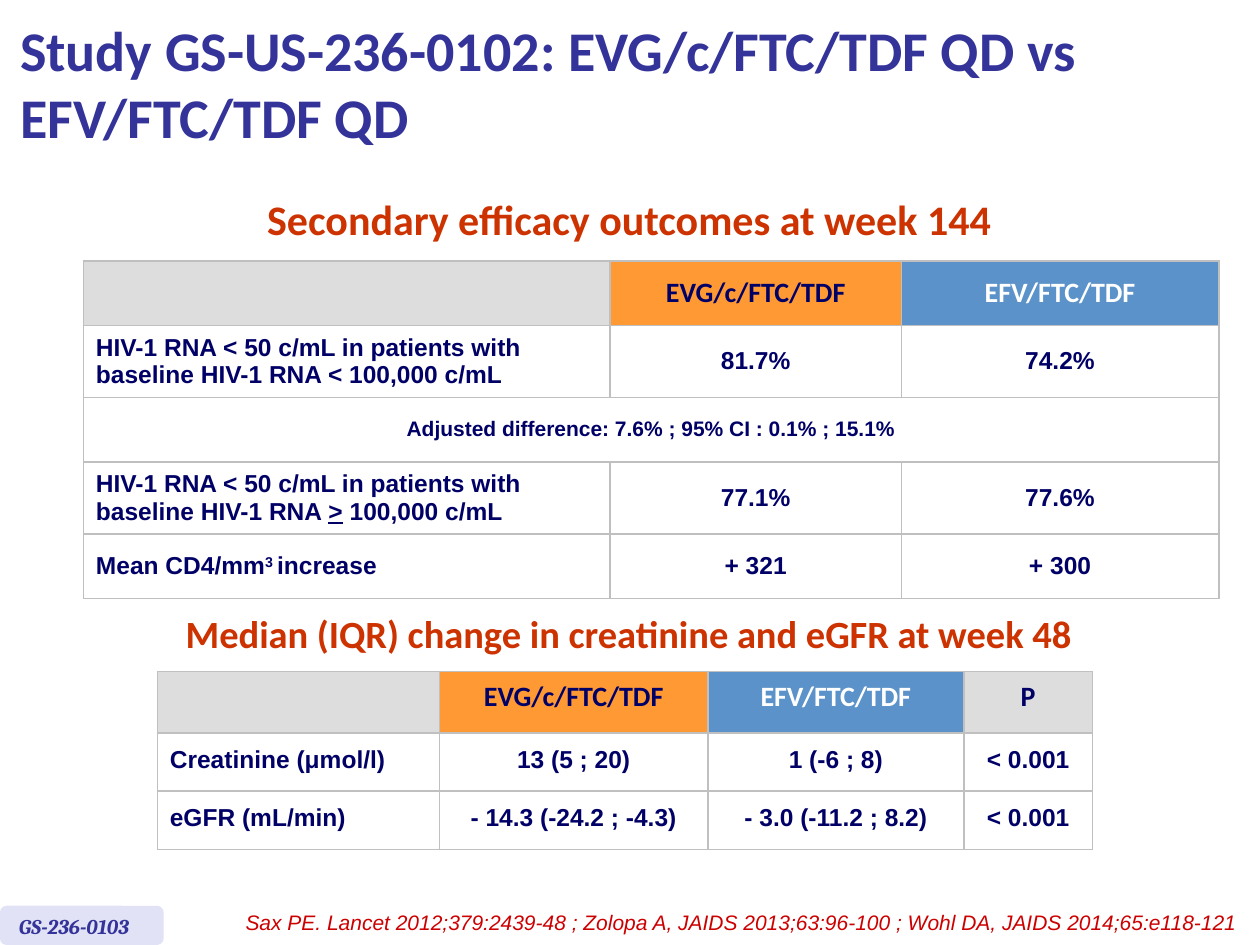
from lxml import etree
from pptx import Presentation
from pptx import util as u
from pptx.dml.color import RGBColor
from pptx.enum import shapes, text
from pptx.oxml import ns

NAVY = RGBColor(0x00, 0x00, 0x66)
BLUE = RGBColor(0x33, 0x33, 0x99)
RUST = RGBColor(0xCC, 0x33, 0x00)
RED = RGBColor(0xCC, 0x00, 0x00)
WHITE = RGBColor(0xFF, 0xFF, 0xFF)
GREY = RGBColor(0xDD, 0xDD, 0xDD)
ORANGE = RGBColor(0xFF, 0x99, 0x33)
SKY = RGBColor(0x5B, 0x92, 0xC9)
LILAC = RGBColor(0xE2, 0xE2, 0xF6)
LEFT, MID, RIGHT = text.PP_ALIGN.LEFT, text.PP_ALIGN.CENTER, text.PP_ALIGN.RIGHT

# Content: a cell is a string or a list of (text, mark) runs
TITLE = "Study GS-US-236-0102: EVG/c/FTC/TDF QD vs EFV/FTC/TDF QD"
CODE = "GS-236-0103"
CITE = ("Sax PE. Lancet 2012;379:2439-48 ; Zolopa A, JAIDS 2013;63:96-100 ; "
        "Wohl DA, JAIDS 2014;65:e118-121 ")
ARMS = ["", "EVG/c/FTC/TDF", "EFV/FTC/TDF"]
RNA = "HIV-1 RNA < 50 c/mL in patients with\nbaseline HIV-1 RNA "
NOTE = "Adjusted difference: 7.6% ; 95% CI : 0.1% ; 15.1%"
TABLES = [
    {"head": "Secondary efficacy outcomes at week 144", "size": 24,
     "box": (5.05, 3.78, 15.27, 1.3), "at": (1.68, 5.26), "line": "BFBFBF",
     "cols": (10.62, 5.87, 6.4), "rows": (1.3, 1.45, 1.3, 1.45, 1.3), "lead": None,
     "cells": [
         ARMS,
         [RNA + "< 100,000 c/mL", "81.7%", "74.2%"],
         [NOTE],
         [[(RNA, ""), (">", "under"), (" 100,000 c/mL", "")], "77.1%", "77.6%"],
         [[("Mean CD4/mm", ""), ("3 ", "super"), ("increase", "")], "+ 321", "+ 300"]]},
    {"head": "Median (IQR) change in creatinine and eGFR at week 48", "size": 22,
     "box": (3.38, 12.17, 18.59, 1.19), "at": (3.17, 13.54), "line": "C0C0C0",
     "cols": (5.69, 5.41, 5.16, 2.59), "rows": (1.24, 1.17, 1.17), "lead": 13.5,
     "cells": [
         ARMS + ["P"],
         ["Creatinine (μmol/l)", "13 (5 ; 20)", "1 (-6 ; 8)", "< 0.001"],
         ["eGFR (mL/min)", "- 14.3 (-24.2 ; -4.3)", "- 3.0 (-11.2 ; 8.2)", "< 0.001"]]},
]
HEADS = [(GREY, NAVY), (ORANGE, NAVY), (SKY, WHITE), (GREY, NAVY)]


def style(size, name="Arial", bold=True, italic=False):
    return {"size": u.Pt(size), "name": name, "bold": bold, "italic": italic}


def write(par, runs, form, ink, align=LEFT):
    """Fill a paragraph with runs that share one format."""
    par.alignment = align
    if isinstance(runs, str):
        runs = [(runs, "")]
    for words, mark in runs:
        for num, line in enumerate(words.split("\n")):
            if num:
                par.add_line_break()
            run = par.add_run()
            run.text = line
            for key, val in form.items():
                setattr(run.font, key, val)
            run.font.color.rgb = ink
            if mark == "under":
                run.font.underline = True
            elif mark == "super":
                run.font._element.set("baseline", "30000")


def label(slide, box, words, form, ink, align=LEFT, wrap=True):
    frame = slide.shapes.add_textbox(*map(u.Cm, box)).text_frame
    frame.word_wrap = wrap
    write(frame.paragraphs[0], words, form, ink, align)


def edge(cell, tint):
    """Draw a 1 pt line on each side of a cell."""
    prop = cell._tc.get_or_add_tcPr()
    for side in ("lnL", "lnR", "lnT", "lnB"):
        line = etree.SubElement(prop, ns.qn("a:" + side), w=str(u.Pt(1)))
        fill = etree.SubElement(line, ns.qn("a:solidFill"))
        etree.SubElement(fill, ns.qn("a:srgbClr"), val=tint)


def grid(slide, data):
    cols, rows = data["cols"], data["rows"]
    size = (sum(cols), sum(rows))
    table = slide.shapes.add_table(len(rows), len(cols),
                                   *map(u.Cm, data["at"] + size)).table
    table.first_row = table.horz_banding = False
    for col, wide in zip(table.columns, cols):
        col.width = u.Cm(wide)
    for r, (high, line) in enumerate(zip(rows, data["cells"])):
        table.rows[r].height = u.Cm(high)
        whole = len(line) == 1
        for c in range(len(cols)):
            cell = table.cell(r, c)
            edge(cell, data["line"])
            back, ink = (WHITE, NAVY) if r else HEADS[c]
            cell.fill.solid()
            cell.fill.fore_color.rgb = back
            cell.vertical_anchor = text.MSO_ANCHOR.MIDDLE
            if c >= len(line) or not line[c]:
                continue
            form = style(12 if whole else 14) if r else style(16, "Calibri")
            par = cell.text_frame.paragraphs[0]
            write(par, line[c], form, ink, MID if c or whole else LEFT)
            if data["lead"]:
                par.line_spacing = u.Pt(data["lead"])
        if whole:
            table.cell(r, 0).merge(table.cell(r, len(cols) - 1))


def main():
    deck = Presentation()
    deck.slide_width, deck.slide_height = u.Cm(25.4), u.Cm(19.05)
    slide = deck.slides.add_slide(deck.slide_layouts[5])

    # Title
    title = slide.shapes.title
    place = zip(("left", "top", "width", "height"), (0.15, 0.13, 24.26, 3.07))
    for key, val in place:
        setattr(title, key, u.Cm(val))
    title.text_frame.vertical_anchor = text.MSO_ANCHOR.MIDDLE
    write(title.text_frame.paragraphs[0], TITLE, style(32, "Calibri"), BLUE)

    # Headed tables
    for data in TABLES:
        label(slide, data["box"], data["head"], style(data["size"], "Calibri"),
              RUST, MID, False)
        grid(slide, data)

    # Footer: study tag and citation
    tag = slide.shapes.add_shape(shapes.MSO_SHAPE.ROUNDED_RECTANGLE,
                                 *map(u.Cm, (0, 18.26, 3.3, 0.79)))
    tag.shadow.inherit = False
    tag.fill.solid()
    tag.fill.fore_color.rgb = LILAC
    tag.line.fill.background()
    label(slide, (0.13, 18.29, 3.05, 0.76), CODE,
          style(12, "Cambria", italic=True), BLUE)
    label(slide, (4.24, 18.21, 21.08, 0.76), CITE,
          style(12, bold=False, italic=True), RED, RIGHT)

    deck.save("out.pptx")


if __name__ == "__main__":
    main()
